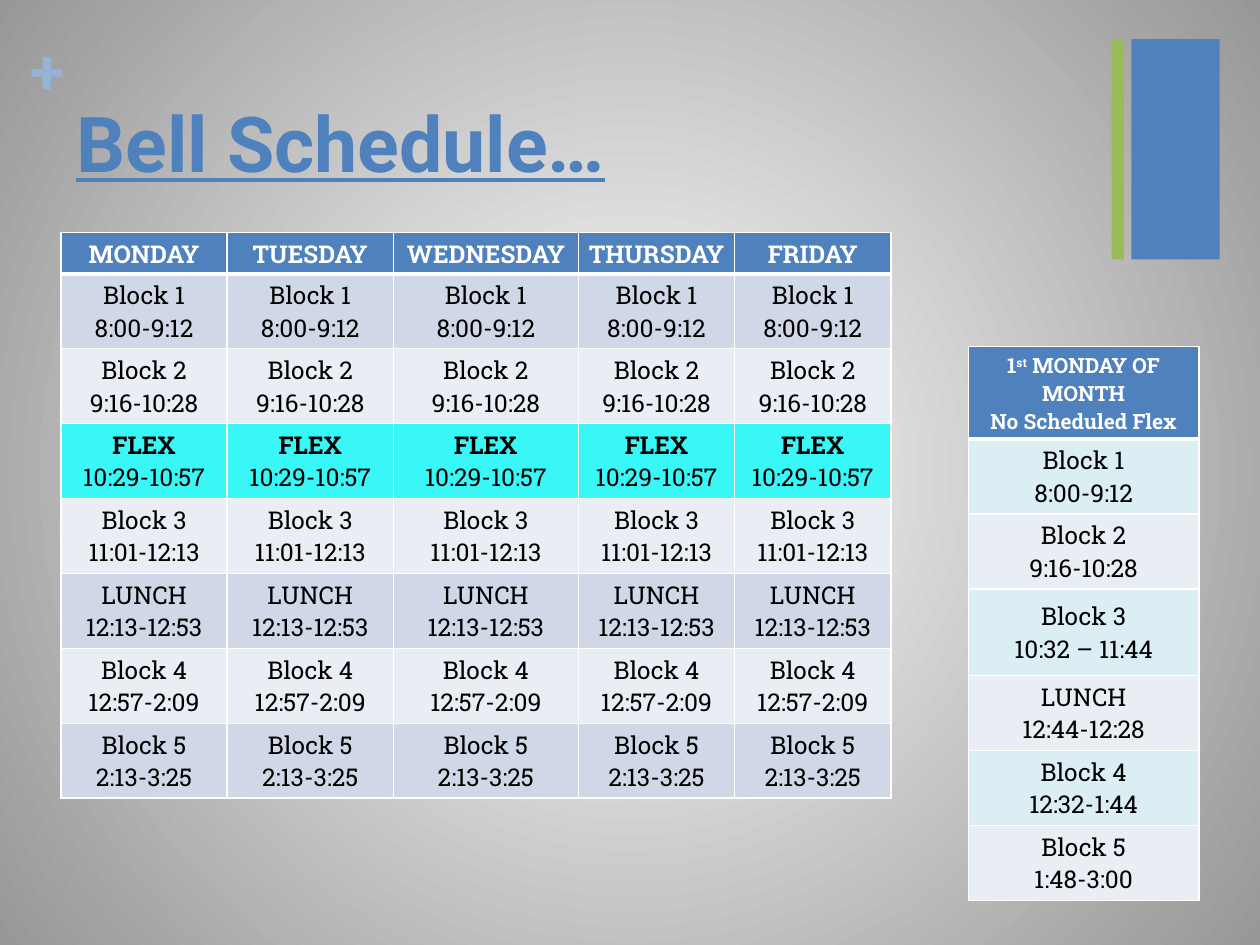
from dataclasses import dataclass

from lxml.etree import SubElement
from pptx import Presentation
from pptx.dml.color import RGBColor as RGB
from pptx.enum.shapes import MSO_SHAPE as SHAPE
from pptx.enum.text import MSO_ANCHOR as ANCHOR, PP_ALIGN as ALIGN
from pptx.oxml.ns import qn
from pptx.util import Cm, Pt

TITLE = "Bell Schedule…"
DAYS = ["MONDAY", "TUESDAY", "WEDNESDAY", "THURSDAY", "FRIDAY"]
WEEK = [
    ("Block 1", "8:00-9:12"),
    ("Block 2", "9:16-10:28"),
    ("FLEX", "10:29-10:57"),
    ("Block 3", "11:01-12:13"),
    ("LUNCH", "12:13-12:53"),
    ("Block 4", "12:57-2:09"),
    ("Block 5", "2:13-3:25"),
]
FIRST_MONDAY_HEADER = [("1", "st", " MONDAY OF MONTH"), ("No Scheduled Flex",)]
FIRST_MONDAY = [
    ("Block 1", "8:00-9:12"),
    ("Block 2", "9:16-10:28"),
    ("Block 3", "10:32 – 11:44"),
    ("LUNCH", "12:44-12:28"),
    ("Block 4", "12:32-1:44"),
    ("Block 5", "1:48-3:00"),
]
SLOT_H = 1.51
WEEK_COLS = [3.35, 3.35, 3.73, 3.15, 3.15]
WEEK_ROWS = [0.83] + [SLOT_H] * len(WEEK)
MONDAY_COLS = [4.65]
MONDAY_ROWS = [1.86, SLOT_H, SLOT_H, 1.75, SLOT_H, SLOT_H, SLOT_H]


@dataclass(frozen=True)
class Theme:
    blue: str = "4F81BD"
    green: str = "9BBB59"
    pale_blue: str = "95B3D7"
    white: str = "FFFFFF"
    black: str = "000000"
    grey: str = "979797"
    flex: str = "39F7F7"
    week_bands: tuple = ("D0D8E8", "E9EDF4")
    monday_bands: tuple = ("DBEEF4", "E9EDF4")
    heading: str = "Roboto"
    body: str = "Roboto Slab"
    title_size: int = 44
    plus_size: int = 36
    cell_size: int = 14
    note_size: int = 12


T = Theme()


def style(p, name, size, color, bold):
    f = p.font
    f.name, f.size, f.bold = name, Pt(size), bold
    f.color.rgb = RGB.from_string(color)


def paint_background(s):
    fill = s.background.fill
    fill.gradient()
    for stop, color in zip(fill.gradient_stops, (T.white, T.grey)):
        stop.color.rgb = RGB.from_string(color)
    grad = s.background._cSld.find(".//" + qn("a:gradFill"))
    grad.remove(grad.find(qn("a:lin")))
    path = SubElement(grad, qn("a:path"), path="circle")
    SubElement(path, qn("a:fillToRect"), l="50000", t="50000", r="50000", b="50000")


def add_bar(s, x, y, w, h, color):
    sp = s.shapes.add_shape(SHAPE.RECTANGLE, Cm(x), Cm(y), Cm(w), Cm(h))
    sp.shadow.inherit = False
    sp.fill.solid()
    sp.fill.fore_color.rgb = RGB.from_string(color)
    sp.line.fill.background()


def add_label(s, text, x, y, w, h, left, top, name, size, color):
    tf = s.shapes.add_textbox(Cm(x), Cm(y), Cm(w), Cm(h)).text_frame
    tf.word_wrap = True
    tf.margin_left = tf.margin_right = Cm(left)
    tf.margin_top, tf.margin_bottom = Cm(top), Cm(0)
    p = tf.paragraphs[0]
    p.add_run().text = text
    style(p, name, size, color, True)
    return p


def set_borders(cell, top, bottom):
    tcPr = cell._tc.get_or_add_tcPr()
    widths = {"a:lnL": 1, "a:lnR": 1, "a:lnT": top, "a:lnB": bottom}
    for i, (tag, width) in enumerate(widths.items()):
        ln = SubElement(tcPr, qn(tag), w=str(Pt(width)))
        SubElement(SubElement(ln, qn("a:solidFill")), qn("a:srgbClr"), val=T.white)
        tcPr.insert(i, ln)


def fill_cell(cell, lines, fill, size, color, bold_lines):
    cell.fill.solid()
    cell.fill.fore_color.rgb = RGB.from_string(fill)
    cell.vertical_anchor = ANCHOR.MIDDLE
    cell.margin_left = cell.margin_right = Cm(0.2)
    cell.margin_top = cell.margin_bottom = Cm(0.1)
    tf = cell.text_frame
    for i, parts in enumerate(lines):
        p = tf.add_paragraph() if i else tf.paragraphs[0]
        p.alignment = ALIGN.CENTER
        for part in parts:
            r = p.add_run()
            r.text = part
            if part == "st":
                r._r.get_or_add_rPr().set("baseline", "30000")
        style(p, T.body, size, color, i in bold_lines)


def add_schedule(s, x, y, cols, rows, headers, header_size, slots, bands):
    frame = s.shapes.add_table(len(rows), len(cols), Cm(x), Cm(y),
                               Cm(sum(cols)), Cm(sum(rows)))
    table = frame.table
    for col, w in zip(table.columns, cols):
        col.width = Cm(w)
    for row, h in zip(table.rows, rows):
        row.height = Cm(h)
    for c, header in enumerate(headers):
        cell = table.cell(0, c)
        fill_cell(cell, header, T.blue, header_size, T.white, range(len(header)))
        set_borders(cell, 1, 3)
        for i, (name, time) in enumerate(slots):
            is_flex = name == "FLEX"
            fill = T.flex if is_flex else bands[i % 2]
            cell = table.cell(i + 1, c)
            fill_cell(cell, [(name,), (time,)], fill, T.cell_size, T.black,
                      [0] if is_flex else [])
            set_borders(cell, 1 if i else 3, 1)


def main():
    prs = Presentation()
    prs.slide_width, prs.slide_height = Cm(25.4), Cm(19.05)
    s = prs.slides.add_slide(prs.slide_layouts[6])
    paint_background(s)
    add_bar(s, 22.81, 0.79, 1.78, 4.44, T.blue)
    add_label(s, "+", 0.61, 0.64, 0.74, 1.55, 0, 0, T.body, T.plus_size, T.pale_blue)
    add_bar(s, 22.41, 0.79, 0.25, 4.44, T.green)
    title = add_label(s, TITLE, 1.28, 1.8, 13.67, 2.54, 0.26, 0.12,
                      T.heading, T.title_size, T.blue)
    title.font.underline = True
    add_schedule(s, 1.23, 4.69, WEEK_COLS, WEEK_ROWS, [[(day,)] for day in DAYS],
                 T.cell_size, WEEK, T.week_bands)
    add_schedule(s, 19.52, 6.99, MONDAY_COLS, MONDAY_ROWS, [FIRST_MONDAY_HEADER],
                 T.note_size, FIRST_MONDAY, T.monday_bands)
    prs.save("out.pptx")


if __name__ == "__main__":
    main()
